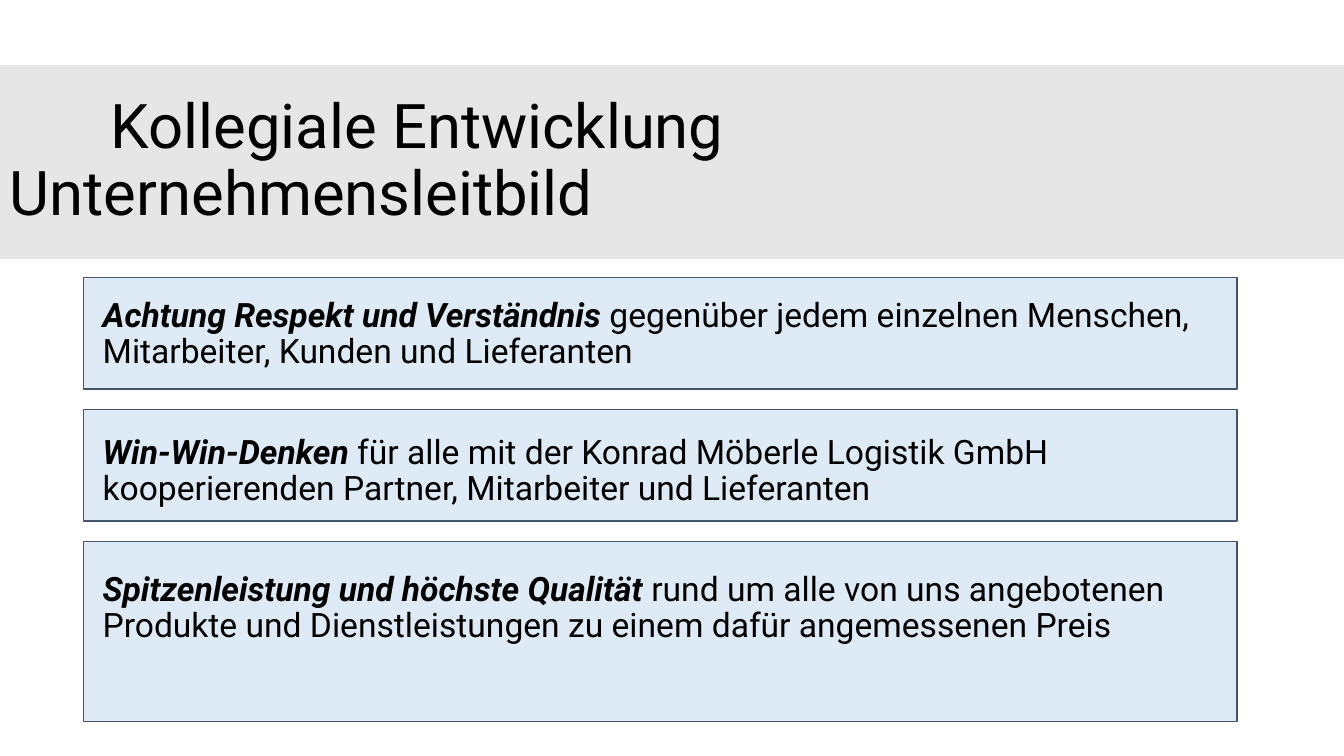
"""Builds the slide on the company mission statement."""
from pptx import Presentation
from pptx.dml.color import RGBColor
from pptx.enum.shapes import MSO_SHAPE
from pptx.enum.text import MSO_ANCHOR, PP_ALIGN
from pptx.util import Inches, Pt

TITLE_LINES = [("Kollegiale Entwicklung", 1), ("Unternehmensleitbild", 0)]
PRINCIPLES = [
    ("Achtung Respekt und Verständnis",
     " gegenüber jedem einzelnen Menschen, Mitarbeiter, Kunden und Lieferanten", 1.11),
    ("Win-Win-Denken",
     " für alle mit der Konrad Möberle Logistik GmbH kooperierenden Partner, "
     "Mitarbeiter und Lieferanten", 1.11),
    ("Spitzenleistung und höchste Qualität",
     " rund um alle von uns angebotenen Produkte und Dienstleistungen "
     "zu einem dafür angemessenen Preis", 1.79),
]
FONT = "Roboto"
PANEL_LEFT, PANEL_TOP, PANEL_WIDTH, PANEL_GAP = 0.83, 2.75, 11.44, 0.2


def color(code):
    return RGBColor.from_string(code)


def add_panel(page, left, top, width, height, fill, line, weight):
    panel = page.shapes.add_shape(
        MSO_SHAPE.RECTANGLE, Inches(left), Inches(top), Inches(width), Inches(height))
    panel.shadow.inherit = False
    panel.fill.solid()
    panel.fill.fore_color.rgb = color(fill)
    panel.line.color.rgb = color(line)
    panel.line.width = Pt(weight)
    return panel


def style_span(span, size, emphasis=False):
    span.font.name = FONT
    span.font.size = Pt(size)
    span.font.color.rgb = color("000000")
    span.font.bold = span.font.italic = emphasis


def add_title(page):
    frame = add_panel(page, 0, 0.65, 13.33, 1.91, "E7E6E6", "E7E6E6", 0.75).text_frame
    frame.vertical_anchor = MSO_ANCHOR.MIDDLE
    frame.text = "\n".join(text for text, _ in TITLE_LINES)
    for para, (_, indent) in zip(frame.paragraphs, TITLE_LINES):
        para.alignment = PP_ALIGN.LEFT
        para.line_spacing = 0.9
        para._p.get_or_add_pPr().set("marL", str(Inches(indent)))
        style_span(para.runs[0], 44)


def add_principles(page):
    top = PANEL_TOP
    for _, _, height in PRINCIPLES:
        add_panel(page, PANEL_LEFT, top, PANEL_WIDTH, height, "DEEBF7", "44546A", 1)
        top += height + PANEL_GAP

    box = page.shapes.add_textbox(Inches(0.92), Inches(2.91), Inches(11.5), Inches(4.25))
    frame = box.text_frame
    frame.word_wrap = True
    for number, (lead, rest, _) in enumerate(PRINCIPLES):
        para = frame.add_paragraph() if number else frame.paragraphs[0]
        para.line_spacing = 0.9
        para.space_before = Pt(46 if number else 0)
        for text, emphasis in [(lead, True), (rest, False)]:
            span = para.add_run()
            span.text = text
            style_span(span, 24, emphasis)


def main():
    deck = Presentation()
    deck.slide_width, deck.slide_height = Inches(13.33), Inches(7.5)
    page = deck.slides.add_slide(deck.slide_layouts[6])
    add_title(page)
    add_principles(page)
    deck.save("out.pptx")


if __name__ == "__main__":
    main()
